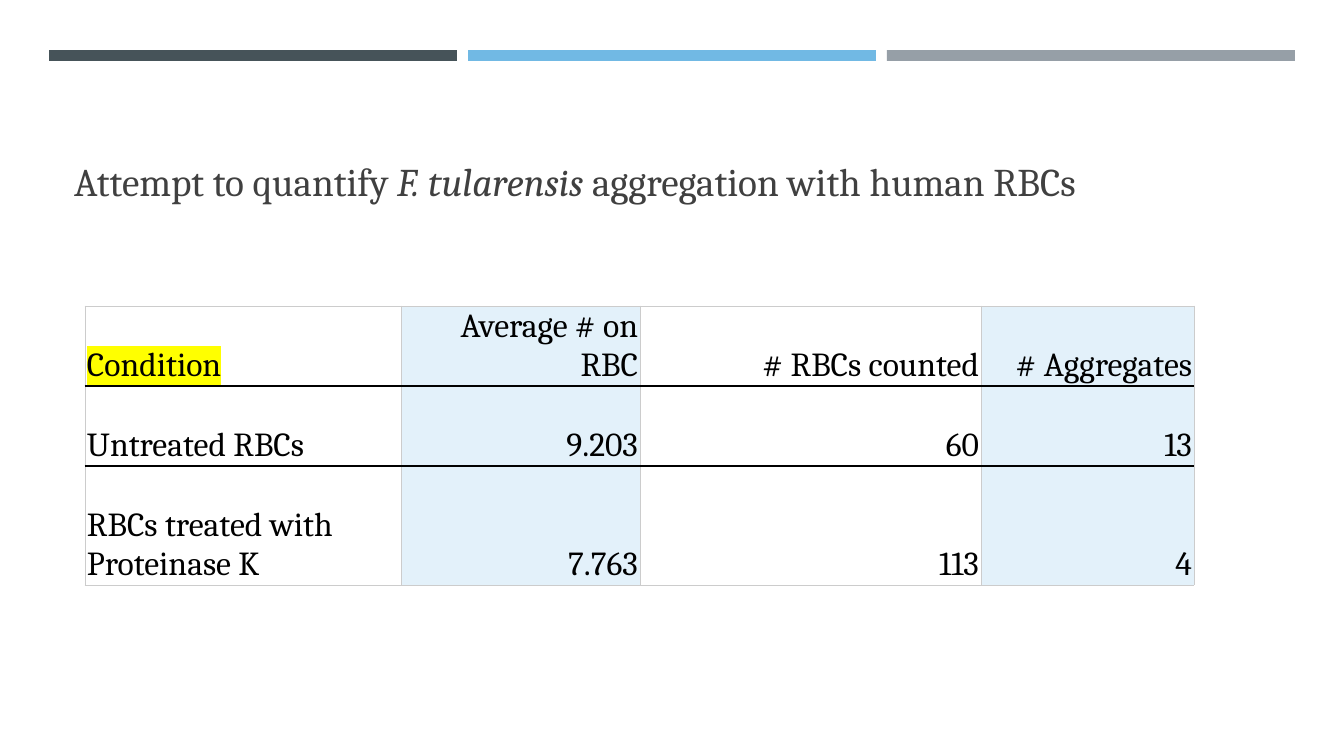
"""Build a slide with a table of bacterial aggregation on red blood cells."""
from lxml.etree import SubElement
from pptx import Presentation
from pptx.dml.color import RGBColor
from pptx.enum.shapes import MSO_SHAPE
from pptx.enum.text import MSO_ANCHOR, MSO_AUTO_SIZE, PP_ALIGN
from pptx.oxml.ns import qn
from pptx.util import Pt

TITLE = [("Attempt to quantify ", False), ("F. tularensis ", True),
         ("aggregation with human RBCs", False)]
ROWS = [
    ("Condition", "Average # on RBC", "# RBCs counted", "# Aggregates"),
    ("Untreated RBCs", "9.203", "60", "13"),
    ("RBCs treated with Proteinase K", "7.763", "113", "4"),
]
COLORS = {"dark": "465359", "blue": "71B9E4", "gray": "969FA7", "title": "404040",
          "text": "000000", "tint": "E3F1FA", "grid": "CCCCCC", "rule": "000000",
          "highlight": "FFFF00"}
FONT = "Cambria"

SLIDE_SIZE = (1344, 756)
BAR_COLORS = ("dark", "blue", "gray")
BAR_LEFT, BAR_TOP, BAR_WIDTH, BAR_HEIGHT, BAR_STEP = 49, 50, 408, 11, 419
TITLE_BOX = (64, 78, 1216, 131)
TABLE_LEFT, TABLE_TOP = 85, 306
COLUMN_WIDTHS = (316, 239, 341, 213)
ROW_HEIGHTS = (80, 80, 119)
CELL_MARGIN_X, CELL_MARGIN_Y = 2, 1


def px(length):
    return round(length * 914400 / 100.8)


def color(name):
    return RGBColor.from_string(COLORS[name])


def format_run(run, size, color_name, italic=False):
    run.font.size = Pt(size)
    run.font.name = FONT
    run.font.italic = italic
    run.font.color.rgb = color(color_name)


def add_solid_color(parent, color_name):
    SubElement(parent, qn("a:srgbClr"), val=COLORS[color_name])


def add_border(cell, side, color_name, width):
    line = SubElement(cell._tc.get_or_add_tcPr(), qn(f"a:ln{side}"), w=str(Pt(width)))
    add_solid_color(SubElement(line, qn("a:solidFill")), color_name)


def add_bars(slide):
    for index, color_name in enumerate(BAR_COLORS):
        bar = slide.shapes.add_shape(
            MSO_SHAPE.RECTANGLE, px(BAR_LEFT + index * BAR_STEP), px(BAR_TOP),
            px(BAR_WIDTH), px(BAR_HEIGHT))
        bar.shadow.inherit = False
        bar.fill.solid()
        bar.fill.fore_color.rgb = color(color_name)
        bar.line.fill.background()


def add_title(slide):
    title = slide.shapes.title
    title.left, title.top, title.width, title.height = map(px, TITLE_BOX)
    frame = title.text_frame
    frame.auto_size = MSO_AUTO_SIZE.NONE
    frame.vertical_anchor = MSO_ANCHOR.BOTTOM
    paragraph = frame.paragraphs[0]
    paragraph.alignment = PP_ALIGN.LEFT
    for text, italic in TITLE:
        run = paragraph.add_run()
        run.text = text
        format_run(run, 28, "title", italic)


def fill_cell(cell, text, row, column):
    cell.text_frame.text = text
    cell.vertical_anchor = MSO_ANCHOR.BOTTOM
    cell.margin_left = cell.margin_right = px(CELL_MARGIN_X)
    cell.margin_top = cell.margin_bottom = px(CELL_MARGIN_Y)
    paragraph = cell.text_frame.paragraphs[0]
    paragraph.alignment = PP_ALIGN.RIGHT if column else PP_ALIGN.LEFT
    format_run(paragraph.runs[0], 24, "text")

    grid, rule = ("grid", 0.5), ("rule", 1)
    top = rule if row else grid
    bottom = rule if row < len(ROWS) - 1 else grid
    for side, border in zip("LRTB", (grid, grid, top, bottom)):
        add_border(cell, side, *border)
    if column % 2:
        cell.fill.solid()
        cell.fill.fore_color.rgb = color("tint")
    else:
        cell.fill.background()


def highlight_run(run):
    properties = run._r.get_or_add_rPr()
    highlight = SubElement(properties, qn("a:highlight"))
    add_solid_color(highlight, "highlight")
    properties.find(qn("a:latin")).addprevious(highlight)


def add_results_table(slide):
    table = slide.shapes.add_table(
        len(ROWS), len(COLUMN_WIDTHS), px(TABLE_LEFT), px(TABLE_TOP),
        px(sum(COLUMN_WIDTHS)), px(sum(ROW_HEIGHTS))).table
    table.first_row = table.horz_banding = False
    for column, width in zip(table.columns, COLUMN_WIDTHS):
        column.width = px(width)
    for row, height in zip(table.rows, ROW_HEIGHTS):
        row.height = px(height)
    for row, texts in enumerate(ROWS):
        for column, text in enumerate(texts):
            fill_cell(table.cell(row, column), text, row, column)
    highlight_run(table.cell(0, 0).text_frame.paragraphs[0].runs[0])


def main():
    presentation = Presentation()
    presentation.slide_width, presentation.slide_height = map(px, SLIDE_SIZE)
    slide = presentation.slides.add_slide(presentation.slide_layouts[5])
    add_bars(slide)
    add_title(slide)
    add_results_table(slide)
    presentation.save("out.pptx")


if __name__ == "__main__":
    main()
